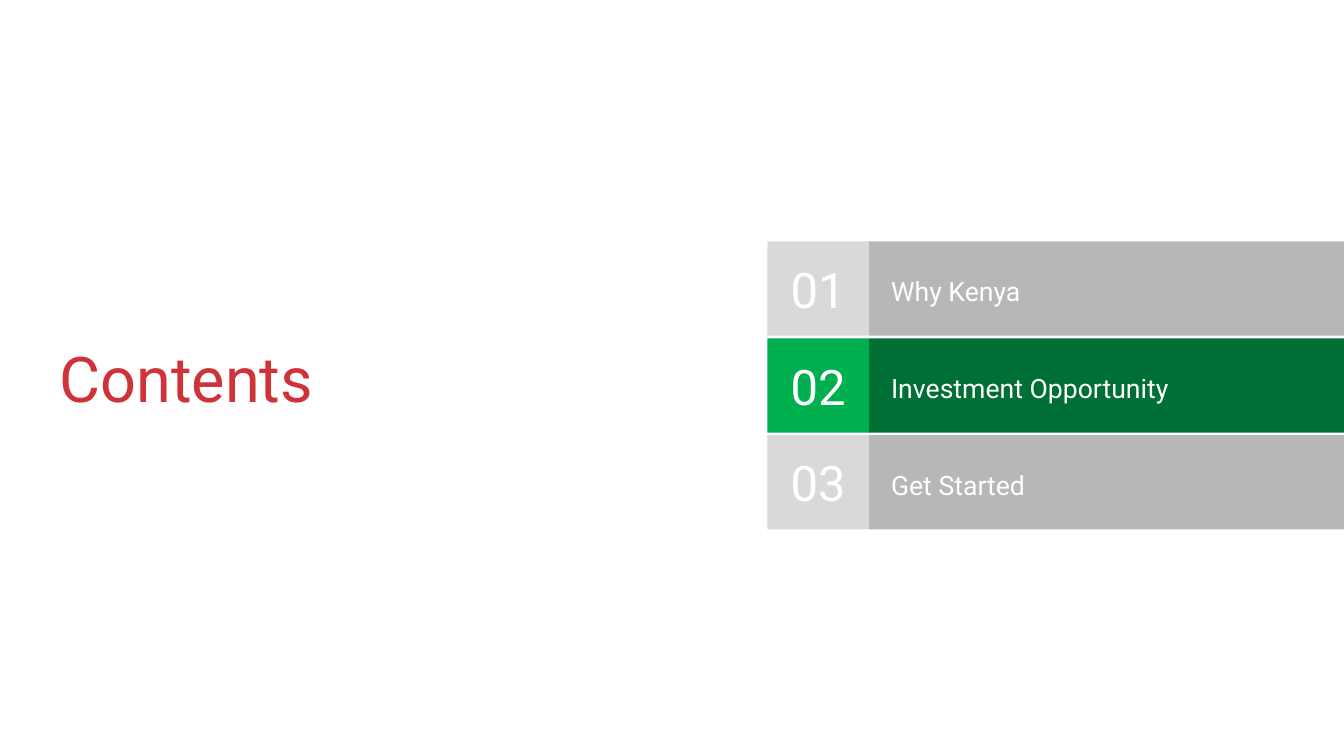
"""Build a contents slide with three numbered bars, the second one lit."""
from dataclasses import dataclass

from pptx import Presentation
from pptx.dml.color import RGBColor
from pptx.enum.shapes import MSO_SHAPE
from pptx.enum.text import MSO_ANCHOR, MSO_AUTO_SIZE, PP_ALIGN
from pptx.util import Cm, Pt

RECT = MSO_SHAPE.RECTANGLE
MIDDLE = MSO_ANCHOR.MIDDLE
FIXED = MSO_AUTO_SIZE.NONE
LEFT, CENTER = PP_ALIGN.LEFT, PP_ALIGN.CENTER

WHITE = RGBColor(0xFF, 0xFF, 0xFF)
RED = RGBColor(0xCF, 0x33, 0x39)
GREY = RGBColor(0xB7, 0xB7, 0xB7)
PALE = RGBColor(0xD9, 0xD9, 0xD9)
GREEN = RGBColor(0x00, 0x6F, 0x35)
BRIGHT = RGBColor(0x00, 0xB0, 0x50)

FONT = "Roboto"
WIDE, HIGH = 67.74, 38.1
TOP, STEP, TALL = 12.17, 4.88, 4.75
NUM_X, BAR_X, LABEL_X = 38.68, 43.79, 44.22
LABEL_W, LABEL_H = 21.64, 3.68
INSET = Cm(0.69)


@dataclass
class Item:
    label: str
    bar: RGBColor = GREY
    box: RGBColor = PALE


ITEMS = [
    Item("Why Kenya"),
    Item("Investment Opportunity", GREEN, BRIGHT),
    Item("Get Started"),
]


def write(shape, text: str, *, size: int, color: RGBColor = WHITE,
          align: PP_ALIGN = LEFT, spacing: float = 1.0) -> None:
    """Put one formatted paragraph in a shape."""
    frame = shape.text_frame
    frame.word_wrap = True
    frame.auto_size = FIXED
    frame.vertical_anchor = MIDDLE
    frame.margin_left = frame.margin_right = INSET
    frame.margin_top = frame.margin_bottom = INSET
    para = frame.paragraphs[0]
    para.alignment = align
    para.line_spacing = spacing
    run = para.add_run()
    run.text = text
    run.font.name = FONT
    run.font.size = Pt(size)
    run.font.color.rgb = color


def add_rect(slide, left: float, top: float, width: float, fill: RGBColor):
    """Add a plain filled rectangle of row height."""
    rect = slide.shapes.add_shape(RECT, Cm(left), Cm(top), Cm(width), Cm(TALL))
    rect.shadow.inherit = False
    rect.fill.solid()
    rect.fill.fore_color.rgb = fill
    rect.line.fill.background()
    return rect


def add_row(slide, index: int, item: Item) -> None:
    """Add the bar, label and number of one item."""
    top = TOP + index * STEP
    add_rect(slide, BAR_X, top, WIDE - BAR_X, item.bar)
    label = slide.shapes.add_textbox(
        Cm(LABEL_X), Cm(top + (TALL - LABEL_H) / 2), Cm(LABEL_W), Cm(LABEL_H))
    write(label, item.label, size=38, spacing=1.15)
    box = add_rect(slide, NUM_X, top, BAR_X - NUM_X, item.box)
    write(box, f"{index + 1:02}", size=70, align=CENTER)


def main() -> None:
    """Build and save the slide."""
    deck = Presentation()
    deck.slide_width, deck.slide_height = Cm(WIDE), Cm(HIGH)
    slide = deck.slides.add_slide(deck.slide_layouts[5])
    title = slide.shapes.title
    title.left, title.top = Cm(2.31), Cm(12.93)
    title.width, title.height = Cm(23.62), Cm(12.93)
    write(title, "Contents", size=90, color=RED, spacing=0.8)
    for index, item in enumerate(ITEMS):
        add_row(slide, index, item)
    deck.save("out.pptx")


if __name__ == "__main__":
    main()
